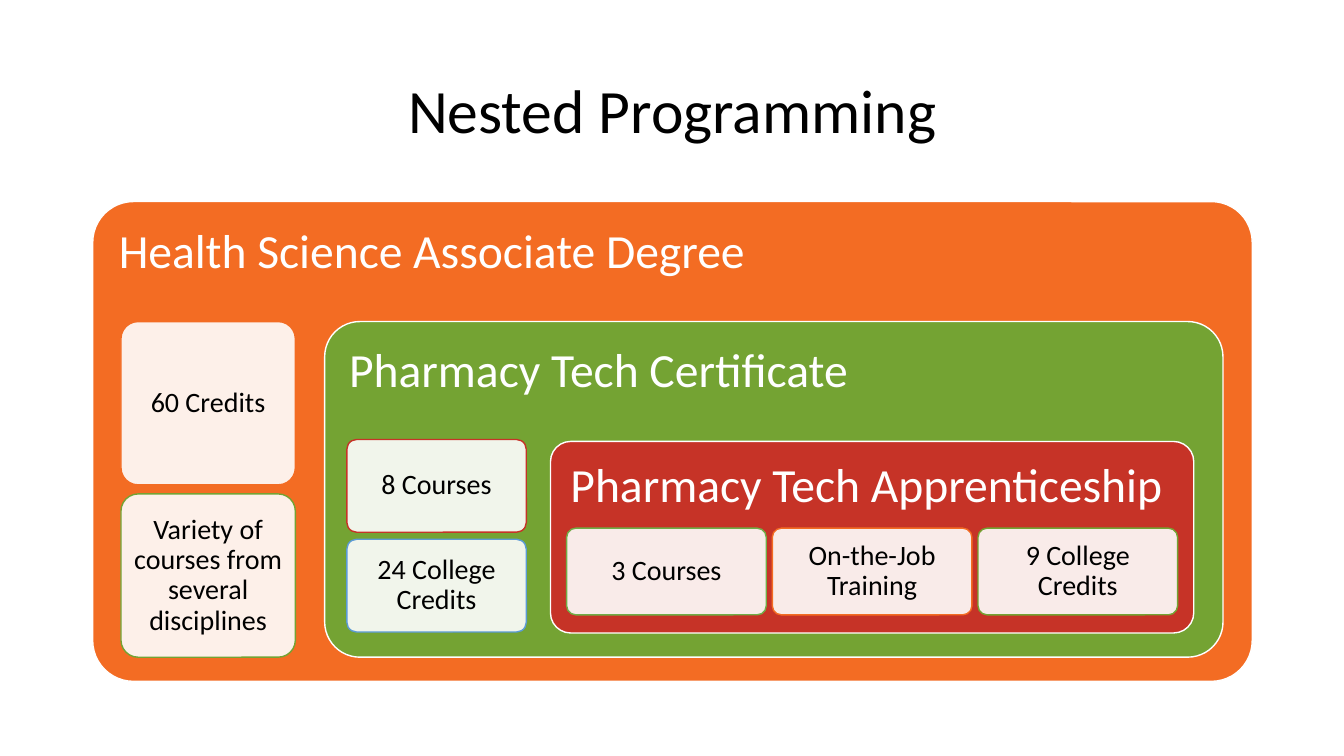
from lxml import etree
from pptx import Presentation
from pptx import util as u
from pptx.dml.color import RGBColor
from pptx.enum import shapes, text
from pptx.oxml.ns import qn

COLOURS = {
    "orange": "F36C23",
    "green": "74A333",
    "leaf": "70AD47",
    "red": "C63327",
    "blue": "5B9BD5",
    "white": "FFFFFF",
    "black": "000000",
}


class NestedPage:
    """Draws the title, nested panels and detail cards on one slide."""

    font = "Calibri"

    def __init__(self, deck):
        self.page = deck.slides.add_slide(deck.slide_layouts[5])

    def colour(self, name):
        return RGBColor.from_string(COLOURS[name])

    def label(self, frame, wording, size, colour, align, anchor, inset):
        frame.word_wrap = True
        frame.auto_size = text.MSO_AUTO_SIZE.NONE
        frame.vertical_anchor = anchor
        frame.margin_left = frame.margin_right = u.Inches(inset)
        frame.margin_top = frame.margin_bottom = u.Inches(inset)
        para = frame.paragraphs[0]
        para.alignment = align
        para.line_spacing = 0.9
        span = para.add_run()
        span.text = wording
        span.font.name = self.font
        span.font.size = u.Pt(size)
        span.font.color.rgb = self.colour(colour)

    def title(self, wording, left, top, width, height):
        box = self.page.shapes.title
        box.left, box.top = u.Inches(left), u.Inches(top)
        box.width, box.height = u.Inches(width), u.Inches(height)
        self.label(box.text_frame, wording, 44, "black",
                   text.PP_ALIGN.CENTER, text.MSO_ANCHOR.MIDDLE, 0.1)

    def rounded(self, place, fill, line, corner):
        box = self.page.shapes.add_shape(
            shapes.MSO_SHAPE.ROUNDED_RECTANGLE, *map(u.Inches, place))
        box.adjustments[0] = corner
        box.shadow.inherit = False
        box.fill.solid()
        box.fill.fore_color.rgb = self.colour(fill)
        box.line.color.rgb = self.colour(line)
        box.line.width = u.Pt(1)
        return box

    def panel(self, wording, place, fill, corner=0.105):
        box = self.rounded(place, fill, "white", corner)
        self.label(box.text_frame, wording, 34, "white",
                   text.PP_ALIGN.LEFT, text.MSO_ANCHOR.TOP, 0.14)

    def card(self, wording, place, line):
        box = self.rounded(place, "white", line, 0.105)
        tint = box.element.spPr.find(qn("a:solidFill"))[0]
        etree.SubElement(tint, qn("a:alpha")).set("val", "90000")
        self.label(box.text_frame, wording, 20, "black",
                   text.PP_ALIGN.CENTER, text.MSO_ANCHOR.MIDDLE, 0.08)

    def cards(self, items, left, top, width, height, across=0, down=0):
        for index, (wording, line) in enumerate(items):
            place = (left + index * across, top + index * down, width, height)
            self.card(wording, place, line)


def main():
    deck = Presentation()
    deck.slide_width, deck.slide_height = u.Inches(13.33), u.Inches(7.5)
    page = NestedPage(deck)
    page.title("Nested Programming", 0.92, 0.4, 11.5, 1.45)

    page.panel("Health Science Associate Degree",
               (0.92, 2, 11.5, 4.76), "orange", 0.085)
    page.cards([("60 Credits", "orange"),
                ("Variety of courses from several disciplines", "green")],
               1.2, 3.19, 1.73, 1.62, down=1.71)

    page.panel("Pharmacy Tech Certificate", (3.22, 3.19, 8.91, 3.33), "green")
    page.cards([("8 Courses", "red"), ("24 College Credits", "blue")],
               3.44, 4.36, 1.78, 0.92, down=0.99)

    page.panel("Pharmacy Tech Apprenticeship", (5.46, 4.38, 6.38, 1.9), "red")
    page.cards([("3 Courses", "leaf"), ("On-the-Job Training", "orange"),
                ("9 College Credits", "green")],
               5.62, 5.24, 1.98, 0.86, across=2.04)

    deck.save("out.pptx")


if __name__ == "__main__":
    main()
